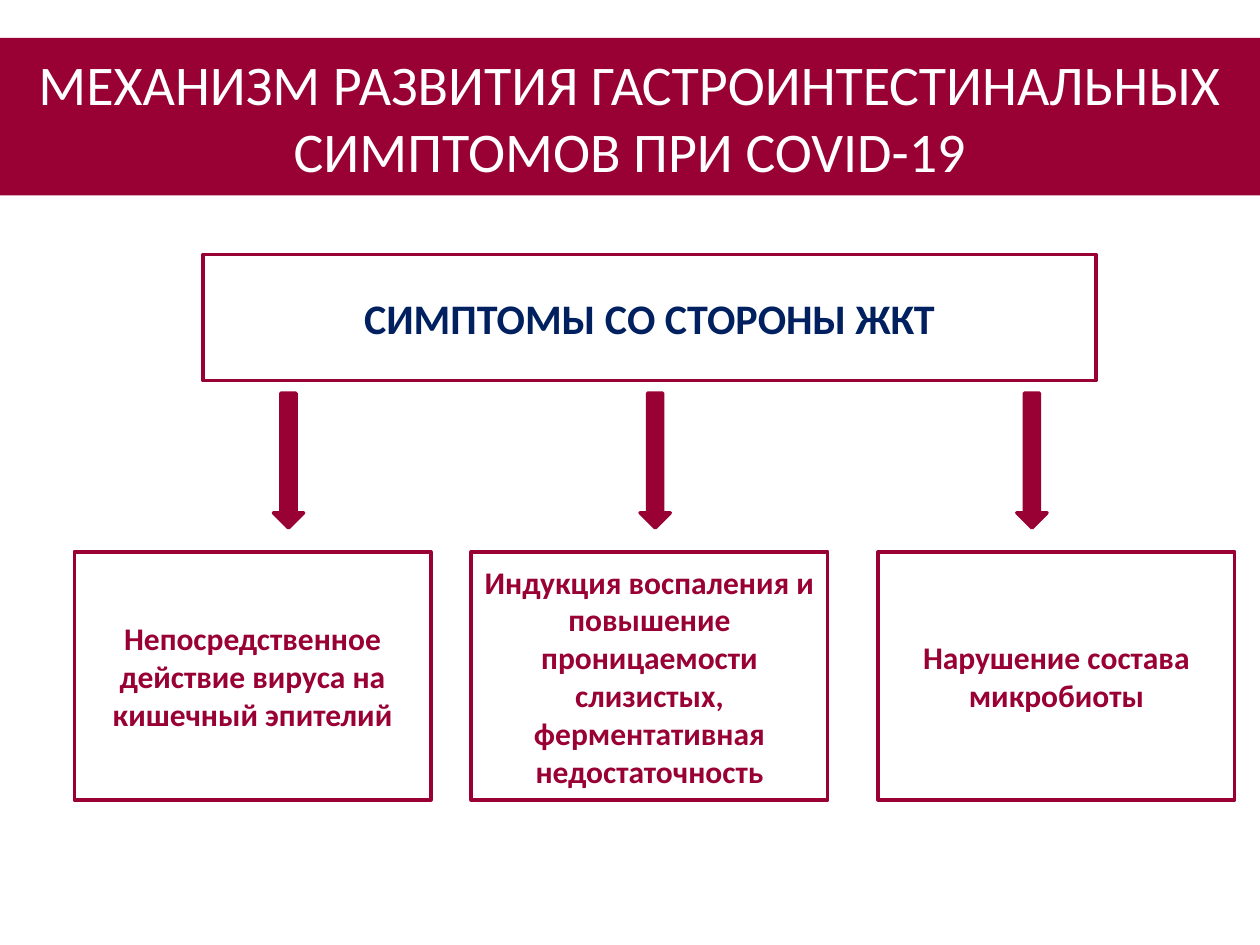
from dataclasses import dataclass

from pptx import Presentation
from pptx.dml.color import RGBColor
from pptx.enum.shapes import MSO_SHAPE as Shape
from pptx.enum.text import MSO_ANCHOR as Anchor, PP_ALIGN as Align
from pptx.util import Inches, Pt


@dataclass(frozen=True)
class Theme:
    font: str = "Calibri"
    crimson: RGBColor = RGBColor(0x99, 0x00, 0x33)
    navy: RGBColor = RGBColor(0x00, 0x20, 0x60)
    white: RGBColor = RGBColor(0xFF, 0xFF, 0xFF)
    title: Pt = Pt(32)
    heading: Pt = Pt(24)
    body: Pt = Pt(18)
    border: Pt = Pt(2)


theme = Theme()


def add_block(s, kind, box, fill, line=None):
    sp = s.shapes.add_shape(kind, *[Inches(v) for v in box])
    sp.shadow.inherit = False
    sp.fill.solid()
    sp.fill.fore_color.rgb = fill
    if line is None:
        sp.line.fill.background()
    else:
        sp.line.color.rgb = line
        sp.line.width = theme.border
    return sp


def write(sp, text, size, color, bold=True):
    tf = sp.text_frame
    tf.word_wrap = True
    tf.vertical_anchor = Anchor.MIDDLE
    p = tf.paragraphs[0]
    p.alignment = Align.CENTER
    r = p.add_run()
    r.text = text
    r.font.name = theme.font
    r.font.size = size
    r.font.bold = bold
    r.font.color.rgb = color


prs = Presentation()
prs.slide_width, prs.slide_height = Inches(10), Inches(7.5)
s = prs.slides.add_slide(prs.slide_layouts[6])

title = add_block(s, Shape.RECTANGLE, (0, 0.3, 10, 1.25), theme.crimson)
write(title, "МЕХАНИЗМ РАЗВИТИЯ ГАСТРОИНТЕСТИНАЛЬНЫХ СИМПТОМОВ ПРИ COVID-19",
      theme.title, theme.white, bold=False)

symptoms = add_block(s, Shape.RECTANGLE, (1.61, 2.02, 7.09, 1), theme.white, theme.crimson)
write(symptoms, "СИМПТОМЫ СО СТОРОНЫ ЖКТ", theme.heading, theme.navy)

# Box left, arrow left, text
mechanisms = [
    (0.59, 2.17, "Непосредственное действие вируса на кишечный эпителий"),
    (3.74, 5.08, "Индукция воспаления и повышение проницаемости слизистых, "
                 "ферментативная недостаточность"),
    (6.97, 8.07, "Нарушение состава микробиоты"),
]
for box_left, arrow_left, text in mechanisms:
    mechanism = add_block(s, Shape.RECTANGLE, (box_left, 4.38, 2.83, 1.97),
                          theme.white, theme.crimson)
    write(mechanism, text, theme.body, theme.crimson)
    add_block(s, Shape.DOWN_ARROW, (arrow_left, 3.12, 0.24, 1.07),
              theme.crimson, theme.crimson)

prs.save("out.pptx")
